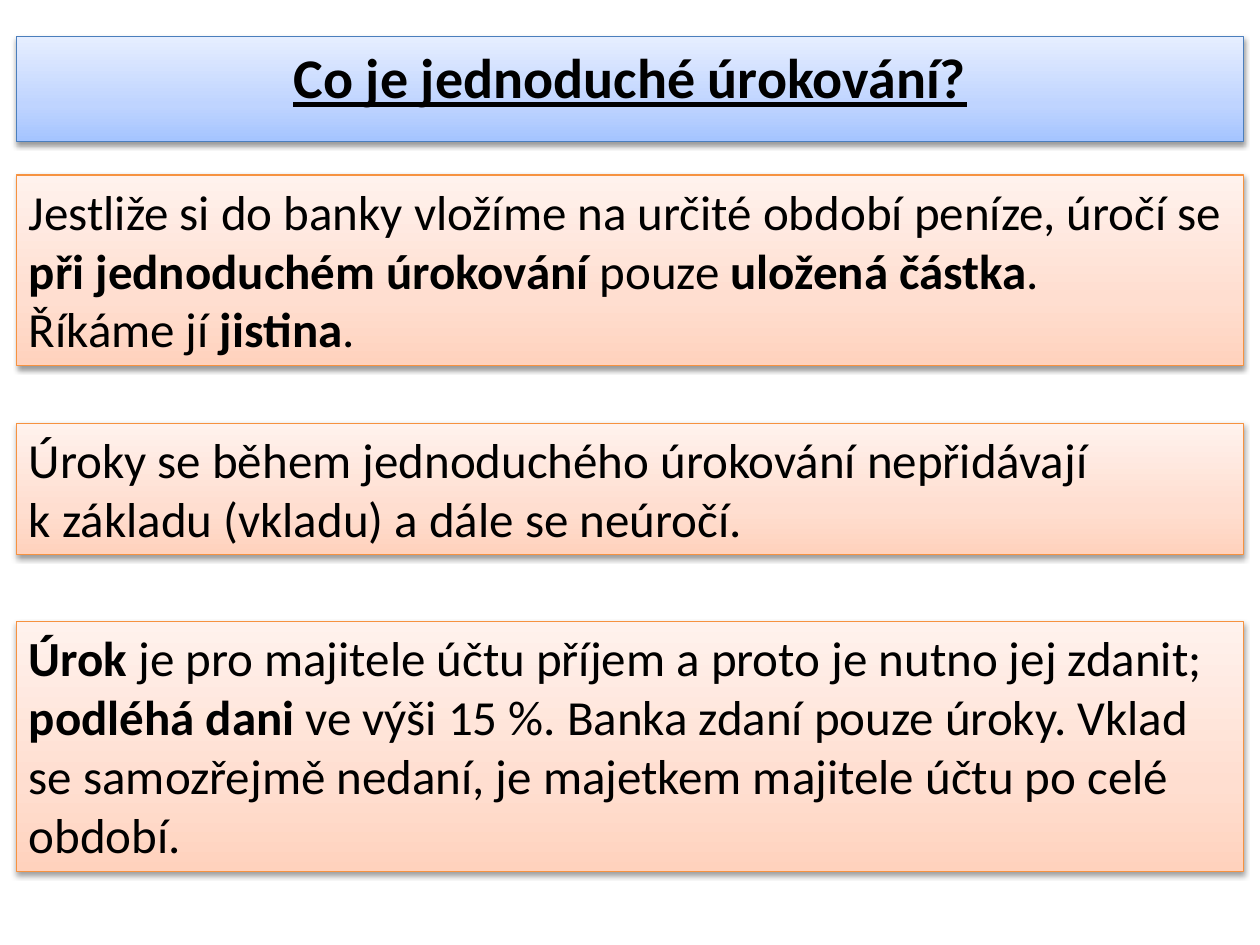
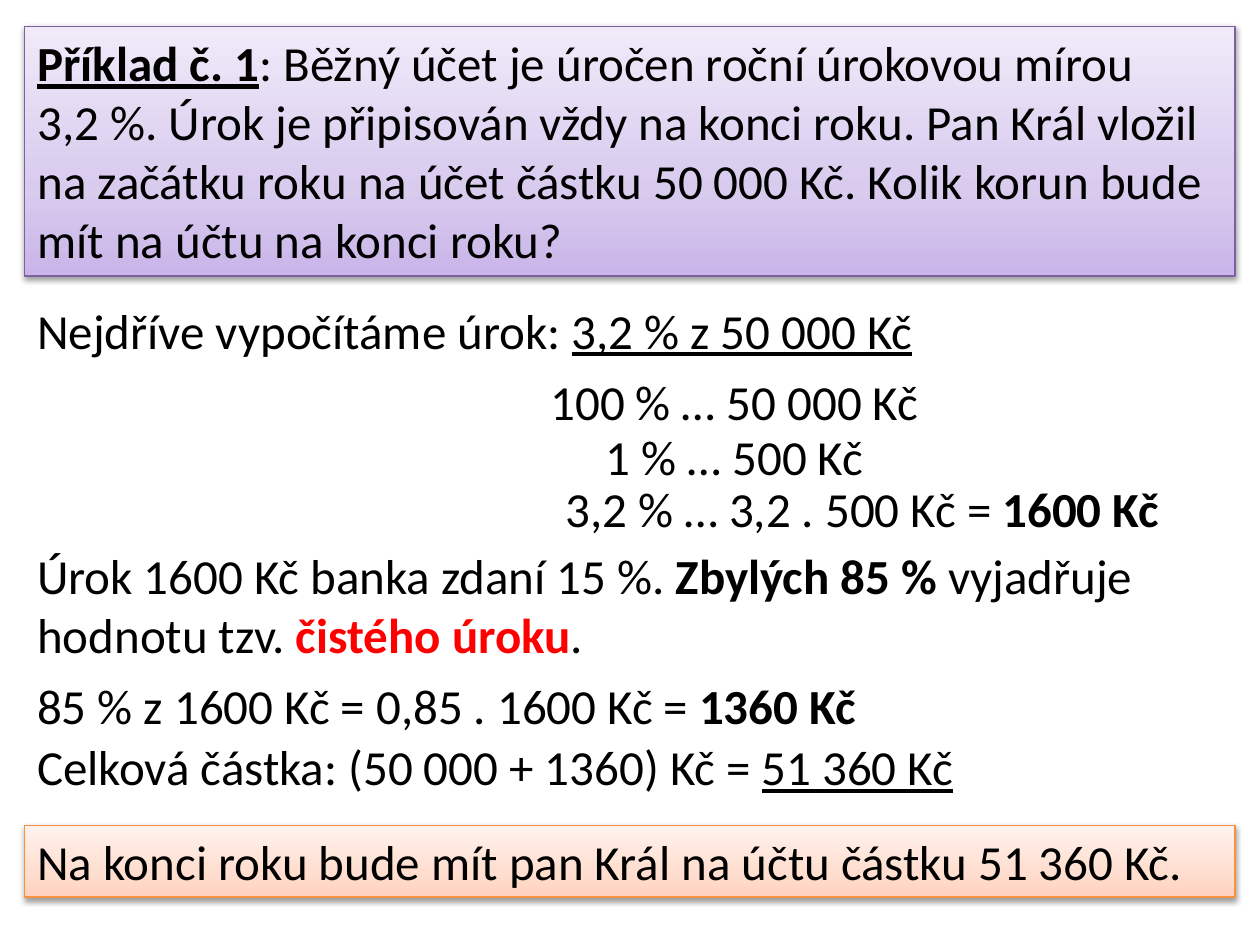
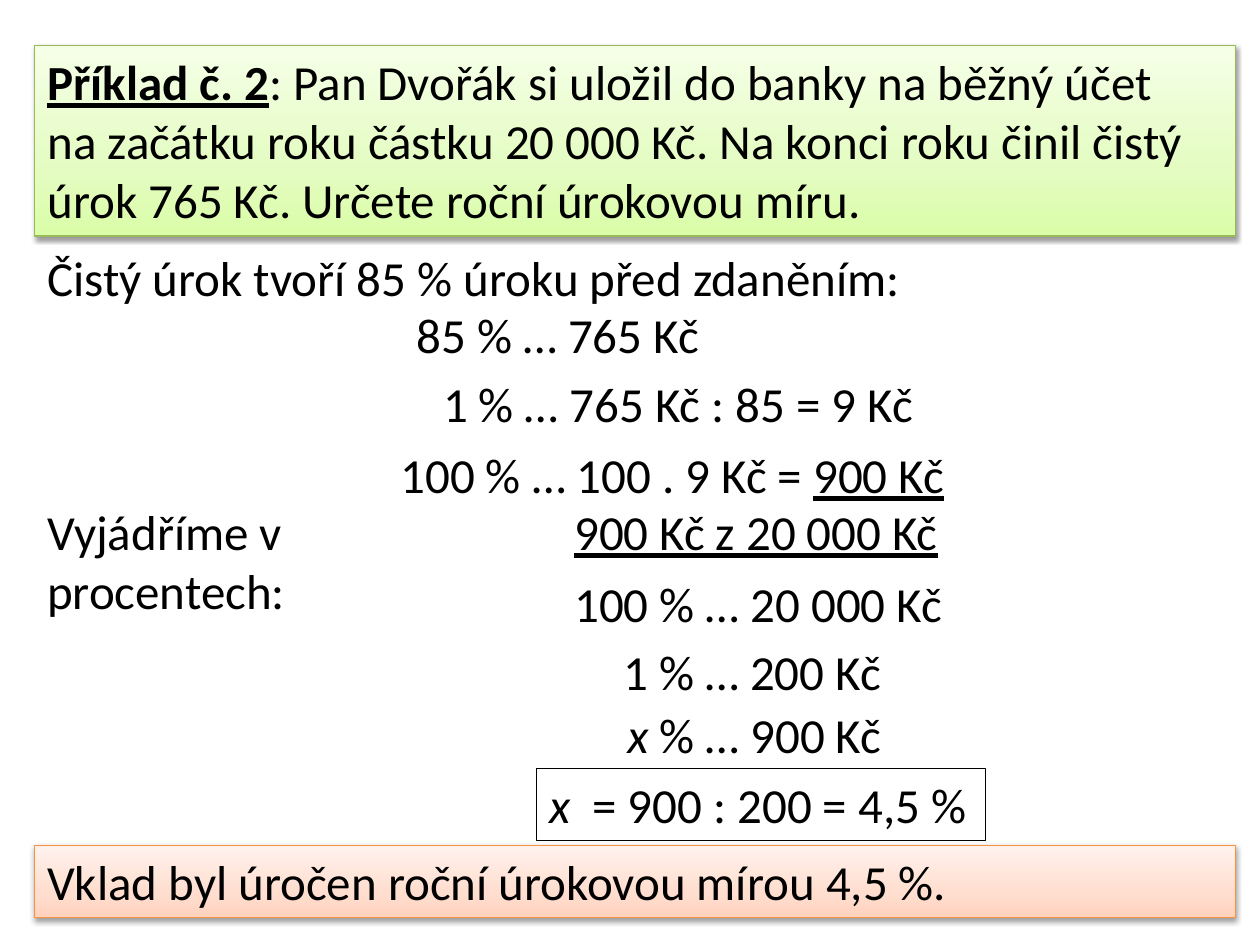
from copy import deepcopy

from pptx import Presentation
from pptx.dml.color import RGBColor
from pptx.enum.text import MSO_ANCHOR, MSO_AUTO_SIZE, PP_ALIGN
from pptx.oxml import parse_xml
from pptx.oxml.ns import nsdecls, qn
from pptx.util import Pt

LEFT, CENTER = PP_ALIGN.LEFT, PP_ALIGN.CENTER
TOP = MSO_ANCHOR.TOP
GROW = MSO_AUTO_SIZE.SHAPE_TO_FIT_TEXT
TITLE_ONLY = 5

FONT = "Calibri"
TEXT_SIZE, TITLE_SIZE = 28, 32
LINE_FACTOR, PADDING = 1.21, 7.2

COLORS = {"text": "000000", "accent": "FF0000"}
# Each panel theme: bottom, middle and top of the gradient, then the outline
THEMES = {
    "blue": ("A4C4FF", "BFD4FF", "E6EEFF", "4B7EBC"),
    "orange": ("FFD2BD", "FFDED0", "FFF2ED", "F69240"),
    "purple": ("C9B5E8", "D8CBEE", "F0EAF9", "7D60A0"),
    "green": ("DAFDA7", "E4FCC2", "F5FFE7", "98B955"),
}
GRADIENT_POSITIONS = (0, 0.35, 1)
SHADOW = (
    f'<a:effectLst {nsdecls("a")}><a:outerShdw blurRad="40000" dist="20000" '
    'dir="5400000" rotWithShape="0"><a:srgbClr val="000000"><a:alpha val="38000"/>'
    "</a:srgbClr></a:outerShdw></a:effectLst>"
)


def bold(text):
    return text, {"bold": True}


def underlined(text):
    return text, {"underline": True}


def italic(text):
    return text, {"italic": True}


def heading(text):
    return text, {"bold": True, "underline": True}


def accent(text):
    return text, {"bold": True, "color": "accent"}


class LessonDeck:
    """Holds the shared style and the current page."""

    def __init__(self):
        self.deck = Presentation()
        self.deck.slide_width, self.deck.slide_height = Pt(720), Pt(540)
        self.page = None

    def new_page(self, left, width):
        """Start a page whose panels share one left edge and width."""
        self.page = self.deck.slides.add_slide(self.deck.slide_layouts[TITLE_ONLY])
        self.left, self.width = left, width

    def fill_text(self, box, paragraphs, size=TEXT_SIZE, align=LEFT, wrap=True):
        """Fill a box; each paragraph is a list of plain strings and styled spans."""
        frame = box.text_frame
        frame.word_wrap, frame.auto_size = wrap, GROW
        frame.vertical_anchor = TOP
        for index, spans in enumerate(paragraphs):
            para = frame.add_paragraph() if index else frame.paragraphs[0]
            para.alignment = align
            para.font.name, para.font.size = FONT, Pt(size)
            para.font.color.rgb = RGBColor.from_string(COLORS["text"])
            for item in spans:
                text, style = (item, {}) if isinstance(item, str) else item
                span = para.add_run()
                span.text = text
                span.font.bold = style.get("bold")
                span.font.underline = style.get("underline")
                span.font.italic = style.get("italic")
                if "color" in style:
                    span.font.color.rgb = RGBColor.from_string(COLORS[style["color"]])

    def place(self, box, left, top, width, lines, size=TEXT_SIZE):
        box.left, box.top, box.width = Pt(left), Pt(top), Pt(width)
        box.height = Pt(round(lines * size * LINE_FACTOR + PADDING, 1))

    def decorate(self, box, theme):
        """Give a box its gradient, outline and soft shadow."""
        *shades, outline = THEMES[theme]
        box.fill.gradient()
        box.fill.gradient_angle = 90
        stop_list = box._element.spPr.find(qn("a:gradFill")).find(qn("a:gsLst"))
        stop_list.insert(1, deepcopy(stop_list[0]))
        for stop, shade, position in zip(box.fill.gradient_stops, shades, GRADIENT_POSITIONS):
            stop.color.rgb = RGBColor.from_string(shade)
            stop.position = position
        self.outline(box, outline)
        box._element.spPr.append(parse_xml(SHADOW))

    def outline(self, box, color):
        box.line.color.rgb = RGBColor.from_string(color)
        box.line.width = Pt(0.75)

    def title(self, top, lines, theme, paragraphs, size=TEXT_SIZE, align=LEFT):
        box = self.page.shapes.title
        self.place(box, self.left, top, self.width, lines, size)
        self.decorate(box, theme)
        self.fill_text(box, paragraphs, size, align)

    def text(self, left, top, width, *paragraphs, lines=1, wrap=False):
        box = self.page.shapes.add_textbox(0, 0, 0, 0)
        self.place(box, left, top, width, lines)
        self.fill_text(box, paragraphs, wrap=wrap)
        return box

    def panel(self, top, lines, *paragraphs):
        box = self.text(self.left, top, self.width, *paragraphs, lines=lines, wrap=True)
        self.decorate(box, "orange")

    def framed(self, left, top, width, *paragraphs):
        self.outline(self.text(left, top, width, *paragraphs), COLORS["text"])


def simple_interest(lesson):
    lesson.new_page(left=9.4, width=701.3)
    lesson.title(20.9, 1, "blue", [[heading("Co je jednoduché úrokování?")]],
                 TITLE_SIZE, CENTER)
    lesson.panel(
        100, 3,
        ["Jestliže si do banky vložíme na určité období peníze, úročí se ",
         bold("při jednoduchém úrokování"), " pouze ", bold("uložená částka"), "."],
        ["Říkáme jí ", bold("jistina"), "."],
    )
    lesson.panel(
        241.9, 2,
        ["Úroky se během jednoduchého úrokování nepřidávají"],
        ["k základu (vkladu) a dále se neúročí."],
    )
    lesson.panel(
        355.2, 4,
        [bold("Úrok"), " je pro majitele účtu příjem a proto je nutno jej zdanit;"],
        [bold("podléhá dani "), "ve výši 15 %. Banka zdaní pouze úroky. Vklad "
         "se samozřejmě nedaní, je majetkem majitele účtu po celé"],
        ["období."],
    )


def first_example(lesson):
    lesson.new_page(left=14.2, width=691.5)
    lesson.title(15, 4, "purple", [
        [heading("Příklad č. 1"), ": Běžný účet je úročen roční úrokovou mírou"],
        ["3,2 %. Úrok je připisován vždy na konci roku. Pan Král vložil"],
        ["na začátku roku na účet částku 50 000 Kč. Kolik korun bude"],
        ["mít na účtu na konci roku?"],
    ])

    # Interest before tax
    lesson.text(lesson.left, 168, 520.5,
                ["Nejdříve vypočítáme úrok: ", underlined("3,2 % z 50 000 Kč")])
    lesson.text(307.5, 209, 227.5, ["100 % … 50 000 Kč"])
    lesson.text(339.1, 240, 163.4, ["1 % … 500 Kč"])
    lesson.text(316, 270, 358, ["3,2 % … 3,2 . 500 Kč = ", bold("1600 Kč")])

    # Net interest and total
    lesson.text(
        lesson.left, 308.2, lesson.width,
        ["Úrok 1600 Kč banka zdaní 15 %. ", bold("Zbylých 85 % "), "vyjadřuje"],
        ["hodnotu tzv. ", accent("čistého úroku"), "."],
        lines=2, wrap=True,
    )
    lesson.text(lesson.left, 382.5, 488,
                ["85 % z 1600 Kč = 0,85 . 1600 Kč = ", bold("1360 Kč")])
    lesson.text(lesson.left, 417.6, 545,
                ["Celková částka: (50 000 + 1360) Kč = ", underlined("51 360 Kč")])
    lesson.panel(471.6, 1, ["Na konci roku bude mít pan Král na účtu částku 51 360 Kč."])


def second_example(lesson):
    lesson.new_page(left=19.9, width=686.2)
    lesson.title(26, 3, "green", [
        [heading("Příklad č. 2"), ": Pan Dvořák si uložil do banky na běžný účet"],
        ["na začátku roku částku 20 000 Kč. Na konci roku činil čistý"],
        ["úrok 765 Kč. Určete roční úrokovou míru."],
    ])

    # Interest before tax
    lesson.text(lesson.left, 138.2, 507.6, ["Čistý úrok tvoří 85 % úroku před zdaněním:"])
    lesson.text(231, 170.6, 180, ["85 % … 765 Kč"])
    lesson.text(246.1, 210.2, 293.2, ["1 % … 765 Kč : 85 = 9 Kč"])
    lesson.text(221.8, 250.6, 329.8, ["100 % … 100 . 9 Kč = ", underlined("900 Kč")])

    # Interest rate
    lesson.text(lesson.left, 283, 290, ["Vyjádříme v procentech:"])
    lesson.text(321.1, 283, 227.5, [underlined("900 Kč z 20 000 Kč")])
    lesson.text(321.1, 324, 227.5, ["100 % … 20 000 Kč"])
    lesson.text(349.2, 362.9, 163.4, ["1 % … 200 Kč"])
    lesson.text(351.4, 398.9, 161.3, [italic("x "), "% … 900 Kč"])
    lesson.framed(306.7, 439.2, 256.3, [italic("x "), " = 900 : 200 = 4,5 %"])
    lesson.panel(483.1, 1, ["Vklad byl úročen roční úrokovou mírou 4,5 %."])


def main():
    lesson = LessonDeck()
    for build_page in (simple_interest, first_example, second_example):
        build_page(lesson)
    lesson.deck.save("out.pptx")


if __name__ == "__main__":
    main()
